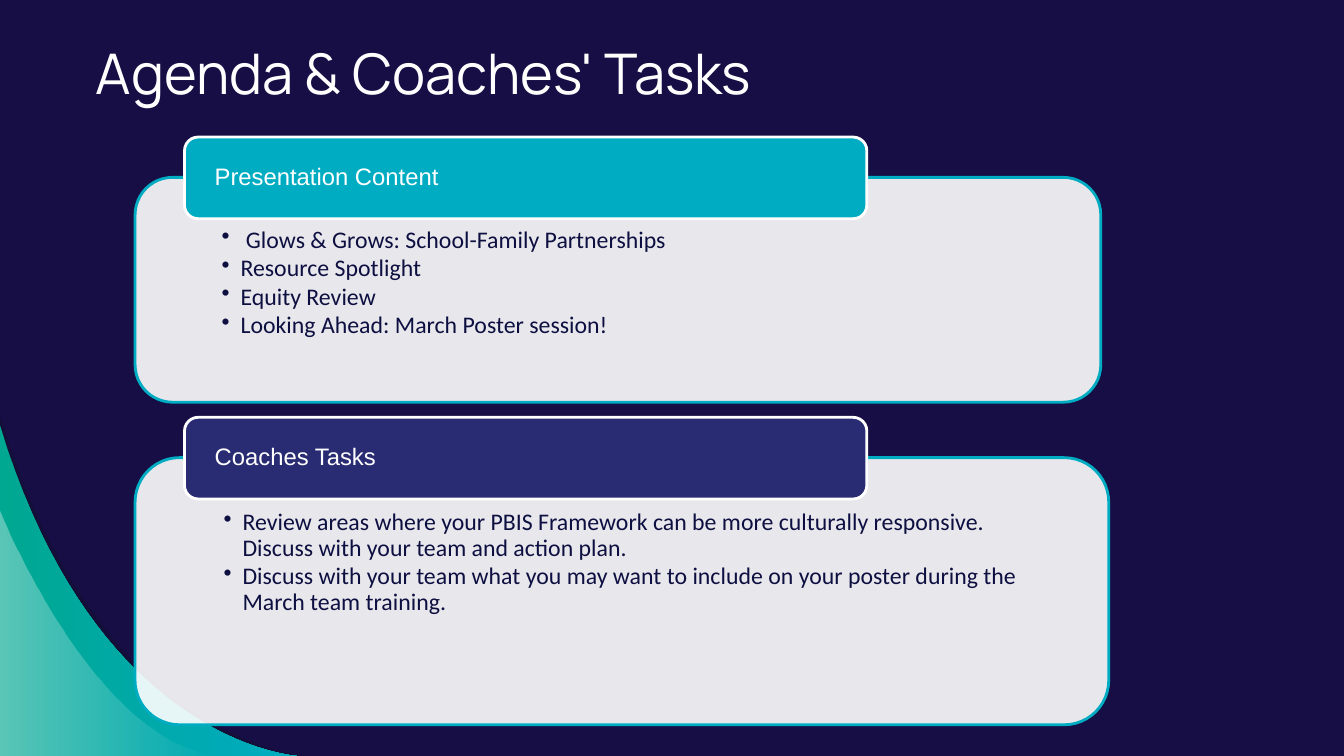
import pptx
import pptx.dml.color
import pptx.enum.dml
import pptx.enum.shapes
import pptx.enum.text
import pptx.oxml.ns
import pptx.util
from lxml import etree

Pt = pptx.util.Pt
RGBColor = pptx.dml.color.RGBColor
Anchor = pptx.enum.text.MSO_ANCHOR

NAVY = RGBColor(0x16, 0x0E, 0x44)
SHADE = RGBColor(0x12, 0x10, 0x2F)
INK = RGBColor(0x0D, 0x0F, 0x41)
INDIGO = RGBColor(0x29, 0x2C, 0x73)
TEAL = RGBColor(0x00, 0xAC, 0xC2)
GREEN = RGBColor(0x00, 0xA7, 0x91)
WHITE = RGBColor(0xFF, 0xFF, 0xFF)

SLIDE_WIDTH, SLIDE_HEIGHT = 960, 540
CARD_LEFT, TAB_LEFT = 96.5, 131.8
TAB_WIDTH, TAB_HEIGHT, TAB_RISE = 487.4, 58.3, 28.8
CURVE_STEPS = 40

# Tab top, tab colour, heading, body width, body height, bullets
CARDS = [
    (97.9, TEAL, "Presentation Content", 689.8, 160.6, [
        " Glows & Grows: School-Family Partnerships",
        "Resource Spotlight",
        "Equity Review",
        "Looking Ahead: March Poster session!",
    ]),
    (298.1, INDIGO, "Coaches Tasks", 695.5, 190.8, [
        "Review areas where your PBIS Framework can be more culturally "
        "responsive. Discuss with your team and action plan.",
        "Discuss with your team what you may want to include on your "
        "poster during the March team training.",
    ]),
]


class AgendaSlide:
    """Holds the style and the slide being built."""

    title_font, heading_font, body_font = "Manrope", "Arial", "Calibri"
    title_size, text_size = 40, 17

    def __init__(self, presentation):
        self.slide = presentation.slides.add_slide(presentation.slide_layouts[5])
        background = self.slide.background.fill
        background.solid()
        background.fore_color.rgb = NAVY

    def set_alpha(self, fill_element, opacities):
        colours = fill_element.iter(pptx.oxml.ns.qn("a:srgbClr"))
        for colour, opacity in zip(colours, opacities):
            alpha = etree.SubElement(colour, pptx.oxml.ns.qn("a:alpha"))
            alpha.set("val", str(opacity * 1000))

    def paint(self, shape, colours, opacities):
        """One colour gives a solid fill, two give a left-to-right gradient."""
        fill = shape.fill
        if len(colours) == 1:
            fill.solid()
            fill.fore_color.rgb = colours[0]
        else:
            fill.gradient()
            fill.gradient_angle = 0
            for stop, colour, position in zip(fill.gradient_stops, colours, (0, 1)):
                stop.color.rgb = colour
                stop.position = position
        properties = shape.element.spPr
        tag = "a:solidFill" if len(colours) == 1 else "a:gradFill"
        self.set_alpha(properties.find(pptx.oxml.ns.qn(tag)), opacities)

    def frame(self, shape, insets, anchor):
        text_frame = shape.text_frame
        text_frame.word_wrap = True
        text_frame.auto_size = pptx.enum.text.MSO_AUTO_SIZE.NONE
        text_frame.vertical_anchor = anchor
        (text_frame.margin_left, text_frame.margin_top,
         text_frame.margin_right, text_frame.margin_bottom) = map(Pt, insets)
        return text_frame

    def add_text(self, paragraph, text, font_name, size, colour):
        paragraph.alignment = pptx.enum.text.PP_ALIGN.LEFT
        run = paragraph.add_run()
        run.text = text
        run.font.name = font_name
        run.font.size = Pt(size)
        run.font.color.rgb = colour

    def title(self, text):
        shape = self.slide.shapes.title
        shape.left, shape.top, shape.width, shape.height = map(
            Pt, (61.2, 18.7, 738.7, 66.2))
        text_frame = self.frame(shape, (7.2,) * 4, Anchor.MIDDLE)
        self.add_text(text_frame.paragraphs[0], text, self.title_font,
                      self.title_size, WHITE)

    def wave(self, curve, colours, opacities):
        """Fills the corner below a cubic curve given by four points."""
        points = []
        for step in range(CURVE_STEPS + 1):
            t = step / CURVE_STEPS
            weights = ((1 - t) ** 3, 3 * t * (1 - t) ** 2, 3 * t * t * (1 - t), t ** 3)
            points.append(tuple(
                Pt(sum(w * point[axis] for w, point in zip(weights, curve)))
                for axis in (0, 1)))
        points.append((0, Pt(SLIDE_HEIGHT)))
        builder = self.slide.shapes.build_freeform(*points[0], scale=1.0)
        builder.add_line_segments(points[1:], close=True)
        shape = builder.convert_to_shape()
        shape.shadow.inherit = False
        shape.line.fill.background()
        self.paint(shape, colours, opacities)

    def panel(self, left, top, width, height, colour, opacity, outline):
        shape = self.slide.shapes.add_shape(
            pptx.enum.shapes.MSO_SHAPE.ROUNDED_RECTANGLE,
            Pt(left), Pt(top), Pt(width), Pt(height))
        shape.shadow.inherit = False
        self.paint(shape, [colour], [opacity])
        shape.line.color.rgb = outline
        shape.line.width = Pt(2)
        return shape

    def bullet(self, paragraph, text):
        properties = paragraph._p.get_or_add_pPr()
        properties.set("marL", str(Pt(13.5)))
        properties.set("indent", str(-Pt(13.5)))
        mark = etree.SubElement(properties, pptx.oxml.ns.qn("a:buChar"))
        mark.set("char", "•")
        paragraph.level = 1
        paragraph.line_spacing = 0.9
        paragraph.space_after = Pt(2)
        self.add_text(paragraph, text, self.body_font, self.text_size, INK)

    def card(self, top, colour, heading, width, height, bullets):
        body = self.panel(CARD_LEFT, top + TAB_RISE, width, height, WHITE, 90, TEAL)
        text_frame = self.frame(body, (54, 28.1, 54, 9.4), Anchor.TOP)
        for index, text in enumerate(bullets):
            paragraph = text_frame.add_paragraph() if index else text_frame.paragraphs[0]
            self.bullet(paragraph, text)

        tab = self.panel(TAB_LEFT, top, TAB_WIDTH, TAB_HEIGHT, colour, 100, WHITE)
        text_frame = self.frame(tab, (18.7, 0, 18.7, 0), Anchor.MIDDLE)
        paragraph = text_frame.paragraphs[0]
        paragraph.line_spacing = 0.9
        self.add_text(paragraph, heading, self.heading_font, self.text_size, WHITE)


def main():
    presentation = pptx.Presentation()
    presentation.slide_width = Pt(SLIDE_WIDTH)
    presentation.slide_height = Pt(SLIDE_HEIGHT)
    agenda = AgendaSlide(presentation)

    # Corner waves
    agenda.wave([(0, 297.4), (70.6, 532), (218.2, 540), (218.2, 540)], [SHADE], [54])
    agenda.wave([(0, 303.8), (68.4, 532), (212.4, 540), (212.4, 540)],
                [GREEN, TEAL], [100, 100])
    agenda.wave([(0, 364.3), (0, 364.3), (65.5, 529.2), (155.5, 540)],
                [WHITE, WHITE], [36, 0])

    # Title and cards
    agenda.title("Agenda & Coaches' Tasks")
    for card in CARDS:
        agenda.card(*card)

    presentation.save("out.pptx")


if __name__ == "__main__":
    main()
